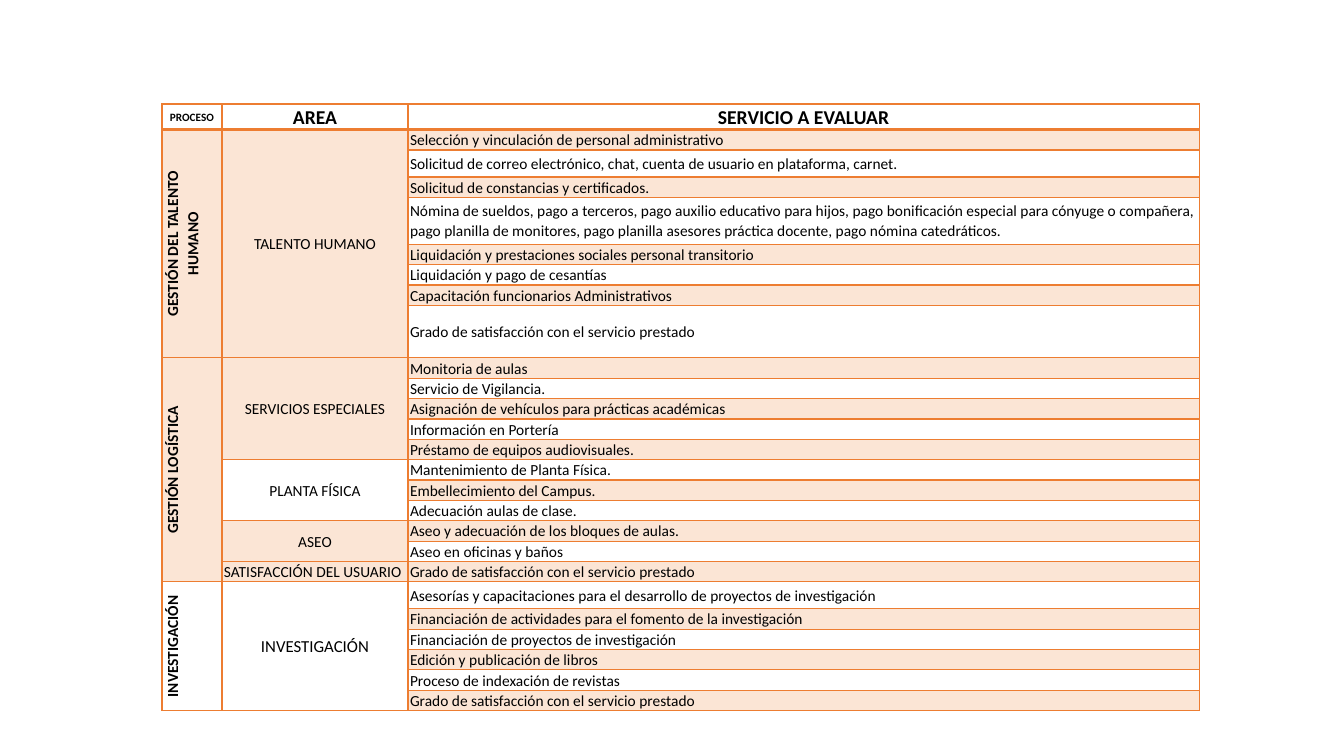
from lxml import etree
from pptx import Presentation
from pptx import util as u
from pptx.dml.color import RGBColor
from pptx.enum import text
from pptx.oxml.ns import qn

PX = 9071
ORANGE = "ED7D31"
COLUMNS = [60, 186, 791]
HEADINGS = [("PROCESO", 8), ("AREA", 14), ("SERVICIO A EVALUAR", 14)]
HEADER_HEIGHT = 25
ROW_HEIGHT = 20
TALL_ROWS = {2: 27, 4: 47, 8: 51, 20: 27}
SATISFACTION = "Grado de satisfacción con el servicio prestado"
USER_AREA = "SATISFACCIÓN DEL USUARIO"

PROCESSES = [
    ("GESTIÓN DEL TALENTO HUMANO", [
        ("TALENTO HUMANO", 11, [
            "Selección y vinculación de personal administrativo",
            "Solicitud de correo electrónico, chat, cuenta de usuario en plataforma, carnet.",
            "Solicitud de constancias y certificados.",
            "Nómina de sueldos, pago a terceros, pago auxilio educativo para hijos, "
            "pago bonificación especial para cónyuge o compañera, pago planilla de monitores, "
            "pago planilla asesores práctica docente, pago nómina catedráticos.",
            "Liquidación y prestaciones sociales personal transitorio",
            "Liquidación y pago de cesantías",
            "Capacitación funcionarios Administrativos",
            SATISFACTION,
        ]),
    ]),
    ("GESTIÓN LOGÍSTICA", [
        ("SERVICIOS ESPECIALES", 11, [
            "Monitoria de aulas",
            "Servicio de Vigilancia.",
            "Asignación de vehículos para prácticas académicas",
            "Información en Portería",
            "Préstamo de equipos audiovisuales.",
        ]),
        ("PLANTA FÍSICA", 11, [
            "Mantenimiento de Planta Física.",
            "Embellecimiento del Campus.",
            "Adecuación aulas de clase.",
        ]),
        ("ASEO", 11, [
            "Aseo y adecuación de los bloques de aulas.",
            "Aseo en oficinas y baños",
        ]),
        (USER_AREA, 11, [SATISFACTION]),
    ]),
    ("INVESTIGACIÓN", [
        ("INVESTIGACIÓN", 12, [
            "Asesorías y capacitaciones para el desarrollo de proyectos de investigación",
            "Financiación de actividades para el fomento de la investigación",
            "Financiación de proyectos de investigación",
            "Edición y publicación de libros",
            "Proceso de indexación de revistas",
            SATISFACTION,
        ]),
    ]),
]


def color(value):
    """Turn a hex string into a colour."""
    return RGBColor.from_string(value)


def style_cell(cell, row):
    """Set the margins, banded fill and borders of a cell."""
    cell.margin_left = cell.margin_right = 2 * PX
    cell.margin_top = cell.margin_bottom = 0
    cell.vertical_anchor = text.MSO_ANCHOR.MIDDLE
    if row % 2:
        cell.fill.solid()
        cell.fill.fore_color.rgb = color(ORANGE)
        tint = cell._tc.tcPr.find(f".//{qn('a:srgbClr')}")
        etree.SubElement(tint, qn("a:alpha"), val="20000")
    else:
        cell.fill.background()
    for index, side in enumerate(("a:lnL", "a:lnR", "a:lnT", "a:lnB")):
        points = 2 if row == 0 and side == "a:lnB" else 1
        line = etree.Element(qn(side), w=str(u.Pt(points)))
        paint = etree.SubElement(line, qn("a:solidFill"))
        etree.SubElement(paint, qn("a:srgbClr"), val=ORANGE)
        cell._tc.tcPr.insert(index, line)


def write_cell(cell, words, size=11, bold=False, centered=True):
    """Write one paragraph into a cell."""
    para = cell.text_frame.paragraphs[0]
    para.text = words
    para.alignment = text.PP_ALIGN.CENTER if centered else text.PP_ALIGN.LEFT
    para.line_spacing = 1.07
    para.font.name = "Calibri"
    para.font.size = u.Pt(size)
    para.font.bold = bold
    para.font.color.rgb = color("000000")


def turn_cell(cell):
    """Make the text of a cell read upwards, indented at both ends."""
    cell._tc.tcPr.set("vert", "vert270")
    properties = cell.text_frame.paragraphs[0]._p.get_or_add_pPr()
    for side in ("marL", "marR"):
        properties.set(side, str(8 * PX))


def merge_rows(table, column, first, count):
    """Join cells down one column and return the first of them."""
    cell = table.cell(first, column)
    if count > 1:
        cell.merge(table.cell(first + count - 1, column))
    return cell


def add_grid(page, count):
    """Add the empty styled table."""
    heights = [HEADER_HEIGHT] + [TALL_ROWS.get(row, ROW_HEIGHT) for row in range(1, count)]
    frame = page.shapes.add_table(count, len(COLUMNS), 162 * PX, 104 * PX,
                                  sum(COLUMNS) * PX, sum(heights) * PX)
    table = frame.table
    table.first_row = table.horz_banding = False
    for column, width in zip(table.columns, COLUMNS):
        column.width = width * PX
    for row, height in enumerate(heights):
        table.rows[row].height = height * PX
        for cell in table.rows[row].cells:
            style_cell(cell, row)
    return table


def fill_table(table):
    """Write the headings, processes, areas and services."""
    for column, (heading, size) in enumerate(HEADINGS):
        write_cell(table.cell(0, column), heading, size, bold=True)
    row = 1
    for process, areas in PROCESSES:
        total = sum(len(services) for _, _, services in areas)
        process_cell = merge_rows(table, 0, row, total)
        write_cell(process_cell, process, bold=True)
        turn_cell(process_cell)
        for area, size, services in areas:
            area_cell = merge_rows(table, 1, row, len(services))
            write_cell(area_cell, area, size, centered=area != USER_AREA)
            for service in services:
                write_cell(table.cell(row, 2), service, centered=False)
                row += 1
    table.cell(row - 1, 2).vertical_anchor = text.MSO_ANCHOR.BOTTOM


def main():
    """Build the deck."""
    deck = Presentation()
    deck.slide_width, deck.slide_height = u.Inches(13.33), u.Inches(7.5)
    page = deck.slides.add_slide(deck.slide_layouts[6])
    count = 1 + sum(len(services) for _, areas in PROCESSES for _, _, services in areas)
    fill_table(add_grid(page, count))
    deck.save("out.pptx")


if __name__ == "__main__":
    main()
